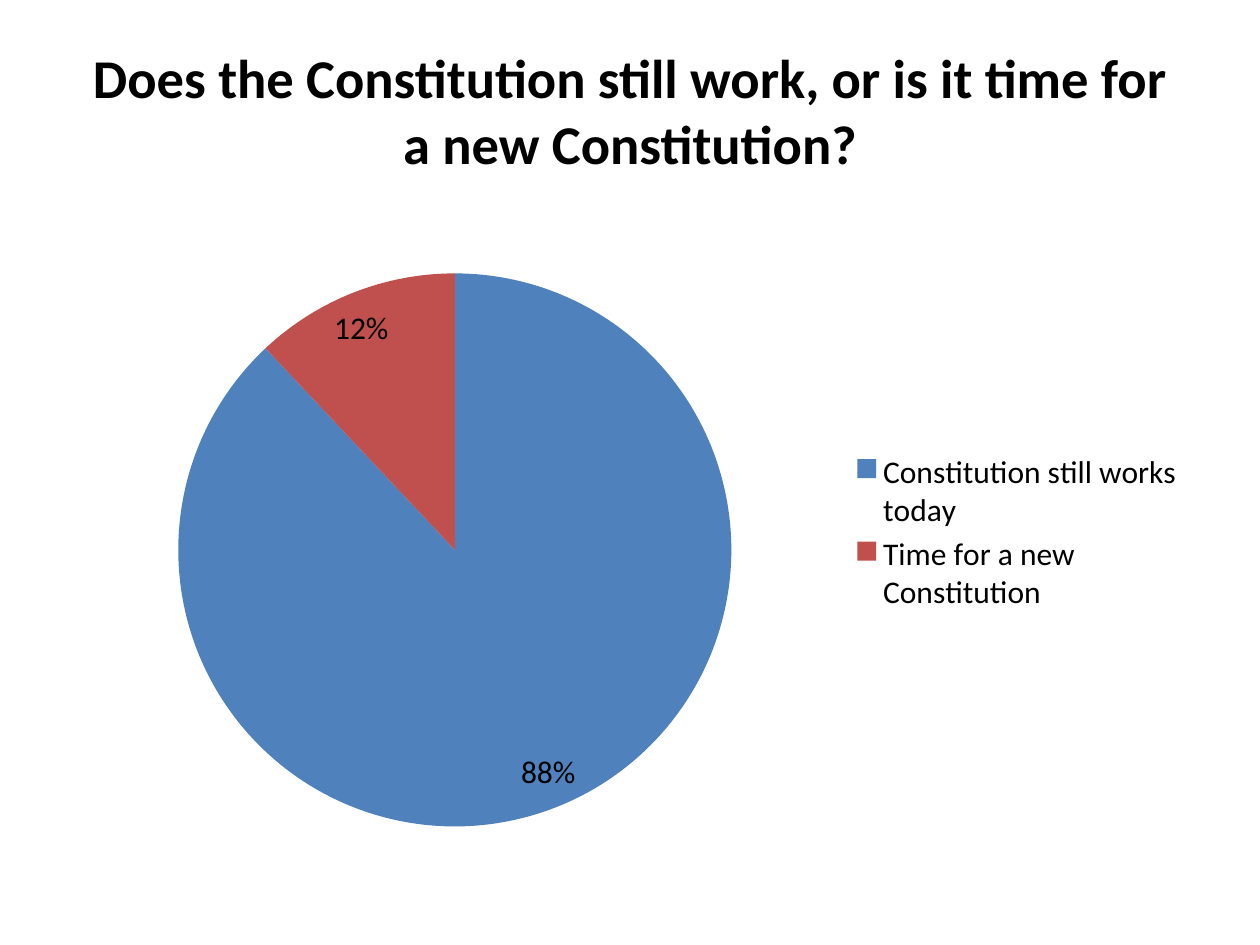
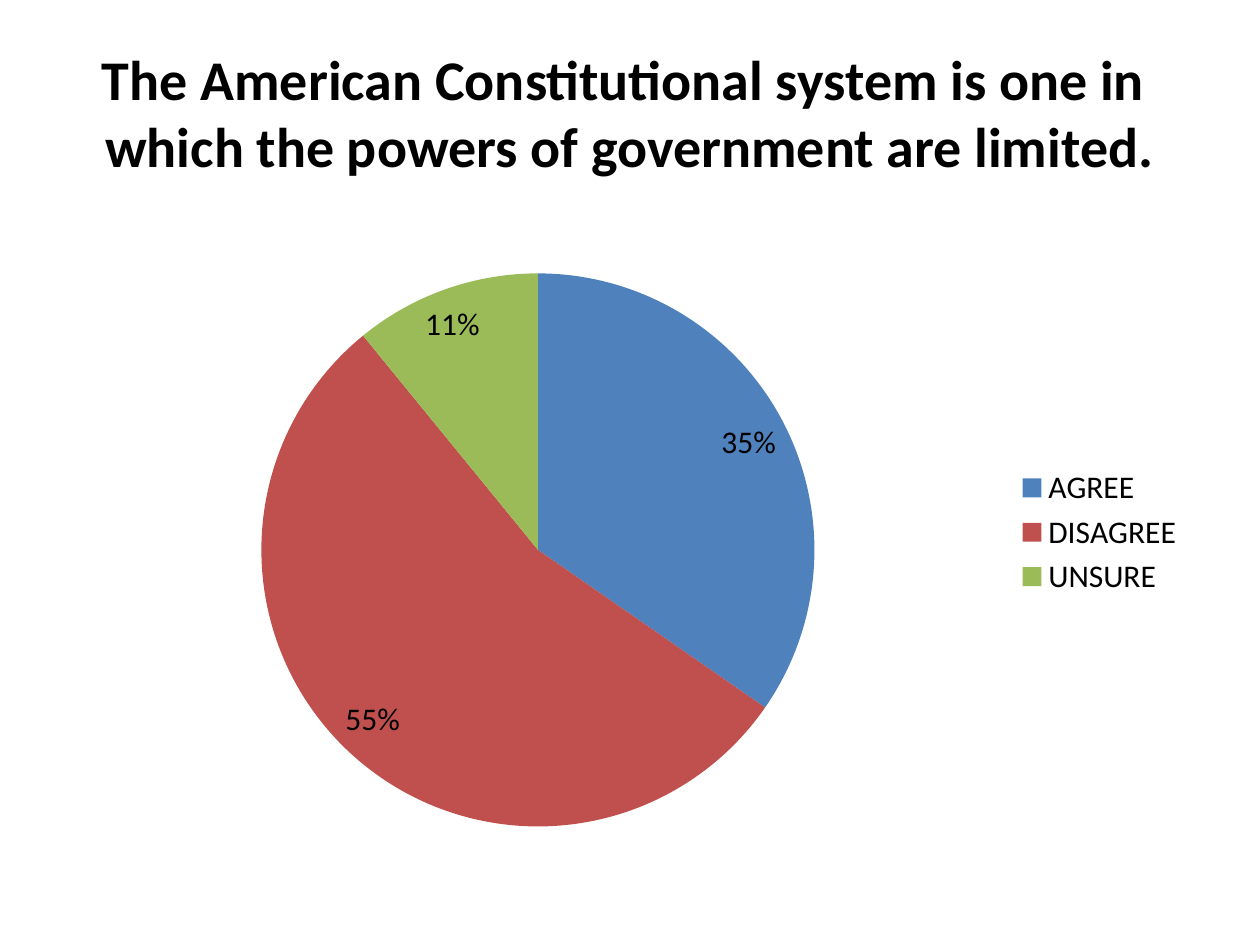
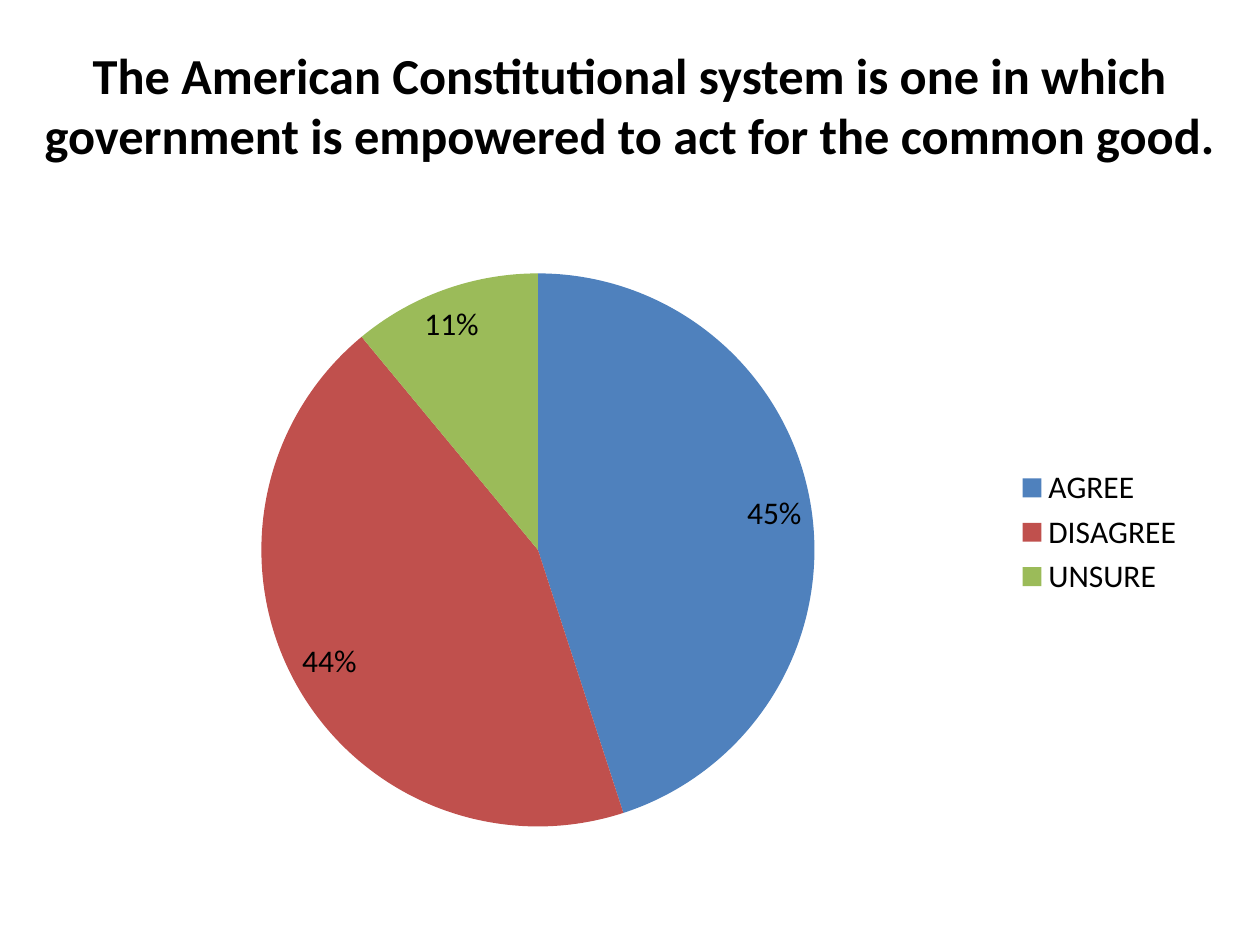
from dataclasses import dataclass

from lxml import etree
from pptx import Presentation
from pptx import util as u
from pptx.chart.data import CategoryChartData
from pptx.dml.color import RGBColor
from pptx.enum import chart as charts
from pptx.enum import text
from pptx.oxml.ns import qn
from pptx.slide import Slide

WIDE, HIGH = u.Inches(10), u.Inches(7.5)
FONT = "Calibri"
COLORS = {"ink": "000000", "blue": "4F81BD", "red": "C0504D", "green": "9BBB59"}
SLICES = ("blue", "red", "green")
VIEWS = ("AGREE", "DISAGREE", "UNSURE")


@dataclass(frozen=True)
class Area:
    """A box on the slide, in twentieths of its width and 150ths of its height."""
    col: float
    row: float
    cols: float
    rows: float

    def box(self) -> tuple[int, int, int, int]:
        dx, dy = WIDE / 20, HIGH / 150
        return (round(self.col * dx), round(self.row * dy),
                round(self.cols * dx), round(self.rows * dy))


HEAD = Area(1, 6, 18, 25)
FULL = Area(0, 6, 20, 25)
PIE = Area(1, 35, 18, 99)
# The discs are placed within PIE; a wide legend pushes its disc to the left.
LEFT = Area(1.83, 8.4, 8.78, 87.8)
MID = Area(3.15, 8.4, 8.78, 87.8)


@dataclass(frozen=True)
class Poll:
    title: str
    size: float
    lift: float  # points the title sits above the middle of its box
    answers: tuple[str, ...]
    shares: tuple[float, ...]
    head: Area = HEAD
    disc: Area = MID


POLLS = (
    Poll("Does the Constitution still work, or is it time for a new Constitution?",
         31.2, 4, ("Constitution still works today", "Time for a new Constitution"),
         (0.88, 0.12), disc=LEFT),
    Poll("The American Constitutional system is one in \v"
         "which the powers of government are limited.",
         32, 3, VIEWS, (0.35, 0.55, 0.11)),
    Poll("The American Constitutional system is one in which government is "
         "empowered to act for the common good.",
         28.8, 7, VIEWS, (0.45, 0.44, 0.11), head=FULL),
)


def color(name: str) -> RGBColor:
    return RGBColor.from_string(COLORS[name])


def style(font, size: float, bold: bool = False) -> None:
    font.name, font.size, font.bold = FONT, u.Pt(size), bold
    font.color.rgb = color("ink")


def write(slide: Slide, words: str, area: Area, *, size: float, lift: float = 0,
          bold: bool = False, align=text.PP_ALIGN.CENTER) -> None:
    frame = slide.shapes.add_textbox(*area.box()).text_frame
    frame.word_wrap = True
    frame.vertical_anchor = text.MSO_ANCHOR.MIDDLE
    frame.margin_bottom = frame.margin_top + u.Pt(2 * lift)
    frame.text = words
    line = frame.paragraphs[0]
    line.alignment = align
    for run in line.runs:
        style(run.font, size, bold)


def place_disc(chart, disc: Area) -> None:
    """Fix the plot's inner area as shares of the chart."""
    area = chart.plots[0].series[0].format  # forces the series to exist
    area = chart.element.find(".//" + qn("c:plotArea"))
    for old in area.findall(qn("c:layout")):
        area.remove(old)
    layout = etree.Element(qn("c:layout"))
    area.insert(0, layout)
    manual = etree.SubElement(layout, qn("c:manualLayout"))
    for tag, val in (
        ("layoutTarget", "inner"), ("xMode", "edge"), ("yMode", "edge"),
        ("x", disc.col / PIE.cols), ("y", disc.row / PIE.rows),
        ("w", disc.cols / PIE.cols), ("h", disc.rows / PIE.rows),
    ):
        etree.SubElement(manual, qn("c:" + tag)).set("val", str(val))


def draw_pie(slide: Slide, poll: Poll) -> None:
    data = CategoryChartData(number_format="0%")
    data.categories = poll.answers
    data.add_series("Series 1", poll.shares)
    chart = slide.shapes.add_chart(charts.XL_CHART_TYPE.PIE, *PIE.box(), data).chart
    style(chart.font, 18)
    chart.has_title = False
    chart.has_legend = True
    chart.legend.position = charts.XL_LEGEND_POSITION.RIGHT
    chart.legend.include_in_layout = False
    place_disc(chart, poll.disc)

    plot = chart.plots[0]
    plot.vary_by_categories = True
    plot.has_data_labels = True
    labels = plot.data_labels
    labels.show_value = True
    labels.show_percentage = False
    labels.number_format, labels.number_format_is_linked = "0%", False
    labels.position = charts.XL_LABEL_POSITION.BEST_FIT
    for i, name in enumerate(SLICES[:len(poll.shares)]):
        fill = plot.series[0].points[i].format.fill
        fill.solid()
        fill.fore_color.rgb = color(name)


def main() -> None:
    deck = Presentation()
    deck.slide_width, deck.slide_height = WIDE, HIGH
    for poll in POLLS:
        slide = deck.slides.add_slide(deck.slide_layouts[6])
        write(slide, poll.title, poll.head, size=poll.size, lift=poll.lift, bold=True)
        draw_pie(slide, poll)
    deck.save("out.pptx")


if __name__ == "__main__":
    main()
